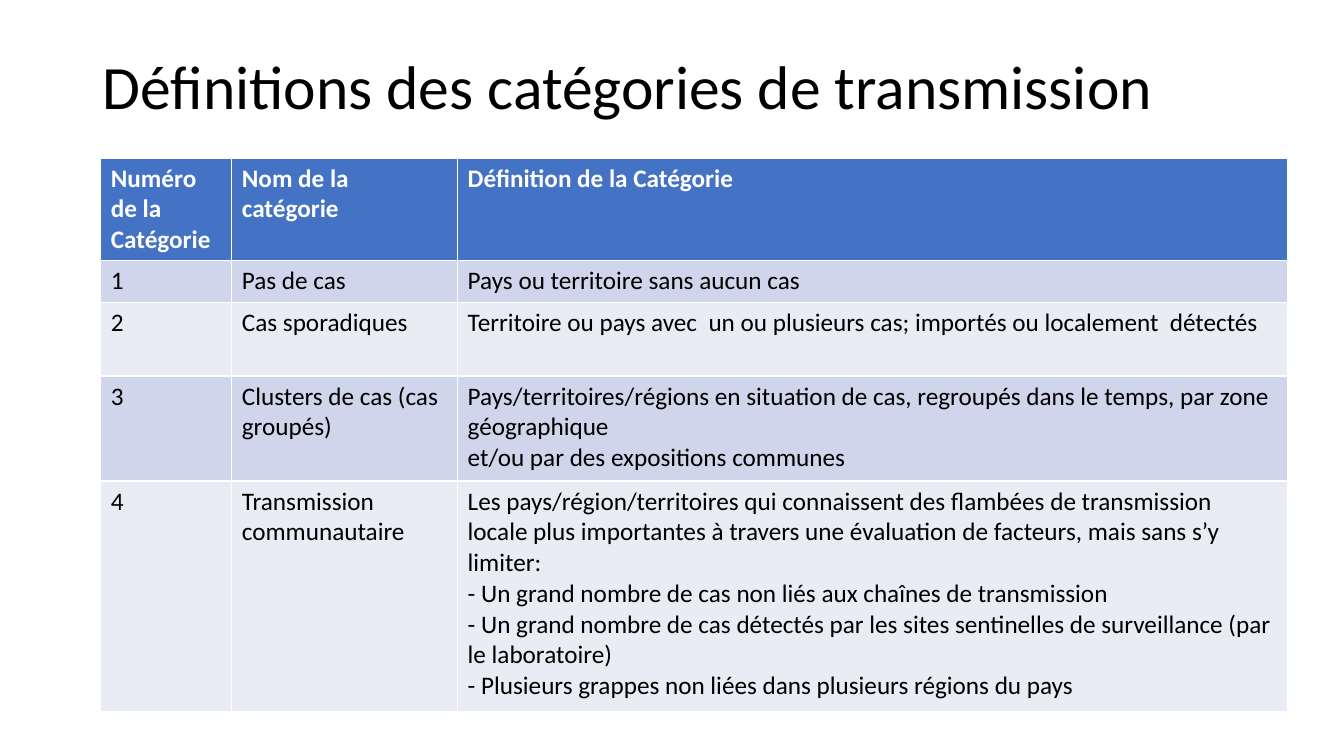
from pptx import Presentation
from pptx.dml.color import RGBColor
from pptx.enum.text import MSO_ANCHOR, PP_ALIGN
from pptx.util import Pt

LEFT = PP_ALIGN.LEFT
MIDDLE = MSO_ANCHOR.MIDDLE
TITLE_ONLY = 5
COLORS = {
    "text": "000000",
    "header_text": "FFFFFF",
    "header": "4472C4",
    "odd_row": "CFD5EA",
    "even_row": "E9EBF5",
}
COLUMN_WIDTHS = [93.6, 161.3, 592.5]
ROW_HEIGHTS = [52.5, 30, 52.5, 75, 165]
CATEGORIES = [
    ("Numéro de la Catégorie", "Nom de la catégorie", "Définition de la Catégorie"),
    ("1", "Pas de cas", "Pays ou territoire sans aucun cas"),
    ("2", "Cas sporadiques",
     "Territoire ou pays avec  un ou plusieurs cas; importés ou localement  détectés"),
    ("3", "Clusters de cas (cas groupés)",
     "Pays/territoires/régions en situation de cas, regroupés dans le temps, "
     "par zone géographique\n"
     "et/ou par des expositions communes"),
    ("4", "Transmission communautaire",
     "Les pays/région/territoires qui connaissent des flambées de transmission locale "
     "plus importantes à travers une évaluation de facteurs, mais sans s’y limiter:\n"
     "- Un grand nombre de cas non liés aux chaînes de transmission\n"
     "- Un grand nombre de cas détectés par les sites sentinelles de surveillance "
     "(par le laboratoire)\n"
     "- Plusieurs grappes non liées dans plusieurs régions du pays"),
]


class SlideBuilder:
    """Adds styled elements to one slide."""

    def __init__(self, slide, font_name="Calibri"):
        self.slide = slide
        self.font_name = font_name

    def set_text(self, text_frame, text, size, color, bold=False):
        text_frame.text = text
        for paragraph in text_frame.paragraphs:
            paragraph.alignment = LEFT
            font = paragraph.font
            font.name = self.font_name
            font.size = Pt(size)
            font.bold = bold
            font.color.rgb = RGBColor.from_string(COLORS[color])

    def title(self, text, left, top, width, height):
        shape = self.slide.shapes.title
        shape.left, shape.top = Pt(left), Pt(top)
        shape.width, shape.height = Pt(width), Pt(height)
        self.set_text(shape.text_frame, text, 44, "text")
        shape.text_frame.vertical_anchor = MIDDLE
        shape.text_frame.paragraphs[0].line_spacing = 0.9

    def table(self, rows, left, top, widths, heights):
        table = self.slide.shapes.add_table(
            len(rows), len(widths), Pt(left), Pt(top),
            Pt(sum(widths)), Pt(sum(heights))).table
        for column, width in zip(table.columns, widths):
            column.width = Pt(width)
        for row, height in zip(table.rows, heights):
            row.height = Pt(height)
        for row_index, texts in enumerate(rows):
            is_header = row_index == 0
            band = "odd_row" if row_index % 2 else "even_row"
            fill = "header" if is_header else band
            color = "header_text" if is_header else "text"
            for column_index, text in enumerate(texts):
                cell = table.cell(row_index, column_index)
                cell.fill.solid()
                cell.fill.fore_color.rgb = RGBColor.from_string(COLORS[fill])
                self.set_text(cell.text_frame, text, 18, color, is_header)


def main():
    presentation = Presentation()
    presentation.slide_width = Pt(960)
    presentation.slide_height = Pt(540)
    slide = presentation.slides.add_slide(presentation.slide_layouts[TITLE_ONLY])
    builder = SlideBuilder(slide)
    builder.title("Définitions des catégories de transmission", 66, 28.75, 828, 70)
    builder.table(CATEGORIES, 72, 113, COLUMN_WIDTHS, ROW_HEIGHTS)
    presentation.save("out.pptx")


if __name__ == "__main__":
    main()
